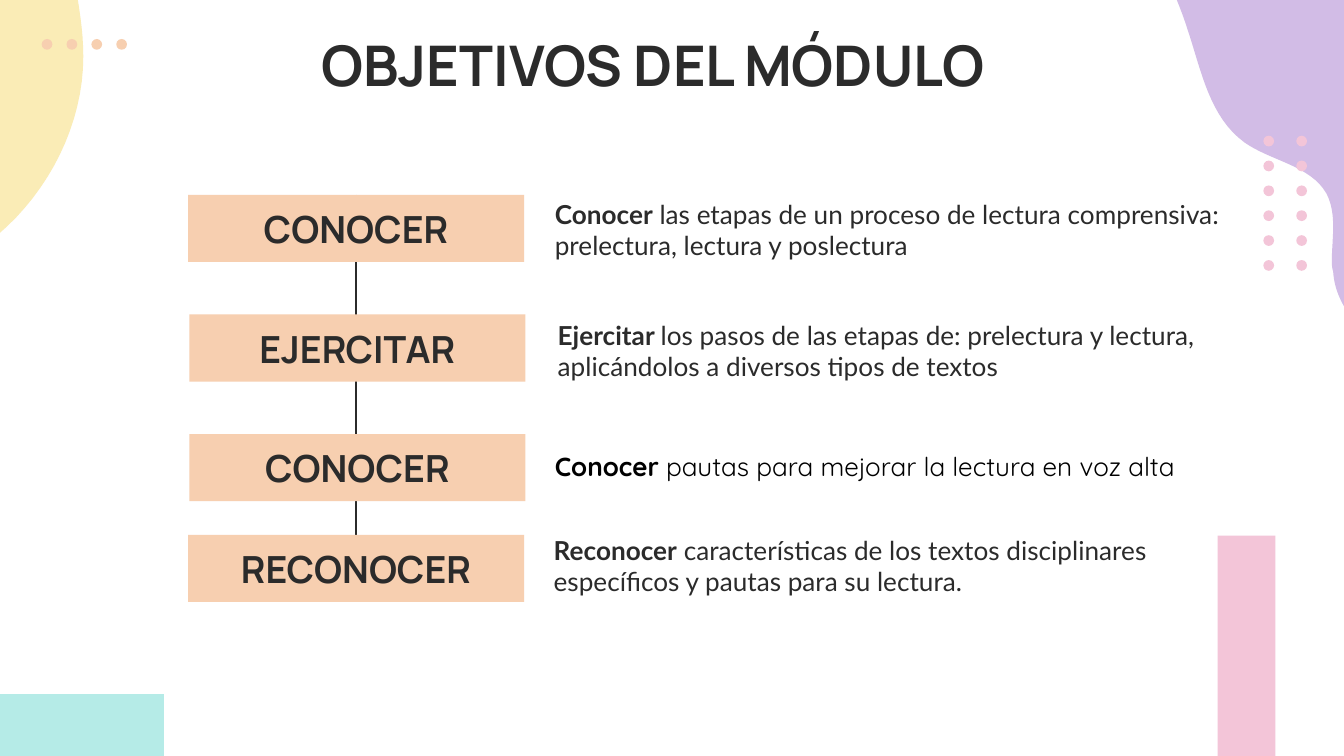
from dataclasses import dataclass

from lxml import etree
from pptx import Presentation
from pptx import util as u
from pptx.dml.color import RGBColor
from pptx.enum import shapes, text
from pptx.oxml.ns import qn

Inches = u.Inches


@dataclass(frozen=True)
class Theme:
    ink: str = "2B2B2B"
    black: str = "000000"
    yellow: str = "FAECB6"
    lilac: str = "D2BCE6"
    pink: str = "F3C5D8"
    mint: str = "B5EBE7"
    peach: str = "F7CFB0"
    heading: str = "Manrope"
    body: str = "Lato"
    accent: str = "Quicksand"
    title_size: int = 30
    label_size: int = 20
    body_size: int = 14
    line_width: float = 0.75


T = Theme()

# Outlines relative to their own box: pairs are corners, sextets are curves
YELLOW_BLOB = [
    (1.67, 0), (0, 0), (0, 3.57), (0.82, 3.57),
    (1.21, 3.24, 1.46, 2.74, 1.46, 2.24),
    (1.46, 1.84, 1.32, 1.46, 1.31, 1.06),
    (1.31, 0.66, 1.45, 0.29, 1.67, 0),
]
LILAC_BLOB = [
    (0, 0), (2.37, 0), (2.37, 3.11), (1.76, 3.11),
    (1.64, 3, 1.55, 2.85, 1.54, 2.68),
    (1.53, 2.65, 1.53, 2.62, 1.53, 2.6),
    (1.53, 2.52, 1.54, 2.43, 1.54, 2.35),
    (1.54, 2.26, 1.53, 2.18, 1.49, 2.1),
    (1.37, 1.89, 1.08, 1.86, 0.88, 1.72),
    (0.62, 1.53, 0.56, 1.19, 0.46, 0.89),
    (0.36, 0.57, 0.2, 0.27, 0, 0),
]


def paint(sp, color):
    sp.shadow.inherit = False
    sp.fill.solid()
    sp.fill.fore_color.rgb = RGBColor.from_string(color)
    sp.line.fill.background()
    return sp


def add_block(s, box, color, kind=shapes.MSO_SHAPE.RECTANGLE):
    return paint(s.shapes.add_shape(kind, *map(Inches, box)), color)


def write(sp, *runs, size=T.body_size, font=T.body, color=T.ink,
          align=text.PP_ALIGN.LEFT, anchor=text.MSO_ANCHOR.MIDDLE,
          left=0.1, inset=0.1):
    """Fill a shape with (words, bold) runs in one paragraph."""
    tf = sp.text_frame
    tf.word_wrap = True
    tf.vertical_anchor = anchor
    tf.margin_left, tf.margin_right = Inches(left), Inches(0.1)
    tf.margin_top = tf.margin_bottom = Inches(inset)
    p = tf.paragraphs[0]
    p.alignment = align
    for words, bold in runs:
        r = p.add_run()
        r.text = words
        r.font.name, r.font.size, r.font.bold = font, u.Pt(size), bold
        r.font.color.rgb = RGBColor.from_string(color)


def add_text(s, box, *runs, **fmt):
    write(s.shapes.add_textbox(*map(Inches, box)), *runs, **fmt)


def add_blob(s, x, y, outline, color, steps=16):
    """Draw an outline at x, y, following each cubic curve in short steps."""
    points = [outline[0]]
    for seg in outline[1:]:
        if len(seg) == 2:
            points.append(seg)
            continue
        curve = [points[-1], seg[:2], seg[2:4], seg[4:]]
        for i in range(1, steps + 1):
            t = i / steps
            weights = ((1 - t) ** 3, 3 * t * (1 - t) ** 2, 3 * t * t * (1 - t), t ** 3)
            points.append(tuple(sum(w * c[axis] for w, c in zip(weights, curve))
                                for axis in (0, 1)))
    points = [(Inches(x + px), Inches(y + py)) for px, py in points]
    builder = s.shapes.build_freeform(*points[0])
    builder.add_line_segments(points[1:], close=True)
    paint(builder.convert_to_shape(), color)


def add_dots(s, x, y, cols, rows, color, dx=0.185, dy=0.185):
    for col in range(cols):
        for row in range(rows):
            add_block(s, (x + col * dx, y + row * dy, 0.08, 0.08), color,
                      shapes.MSO_SHAPE.OVAL)


def add_decoration(s, width, height):
    # Corner blobs
    add_blob(s, -0.84, -1.82, YELLOW_BLOB, T.yellow)
    add_blob(s, width - 1.62, -0.66, LILAC_BLOB, T.lilac)
    # Dot grids
    add_dots(s, width - 0.6, 1.01, 2, 6, T.pink, dx=0.245)
    add_dots(s, 0.31, 0.29, 4, 1, T.peach)
    # Bars along the bottom
    add_block(s, (-0.01, height - 0.46, 1.23, 0.47), T.mint)
    add_block(s, (width - 0.94, height - 1.64, 0.43, 1.64), T.pink)


def add_objectives(s, x, y):
    """Chain of labels on the left, each with its description on the right."""
    # The connecting line goes first so that it lies behind the labels
    line = s.shapes.add_connector(shapes.MSO_CONNECTOR.STRAIGHT, 0, 0, 0, 0)
    line.line.color.rgb = RGBColor.from_string(T.ink)
    line.line.width = u.Pt(T.line_width)
    etree.SubElement(line._element.spPr, qn("a:effectLst"))

    # Labels: (words, x offset, y offset)
    labels = []
    for words, dx, dy in [("CONOCER", 0, 0), ("EJERCITAR", 0.01, 0.89),
                          ("CONOCER", 0.01, 1.78), ("RECONOCER", 0, 2.53)]:
        sp = add_block(s, (x + dx, y + dy, 2.5, 0.5), T.peach)
        write(sp, (words, True), size=T.label_size, font=T.heading,
              align=text.PP_ALIGN.CENTER)
        labels.append(sp)
    line.begin_connect(labels[0], 0)
    line.end_connect(labels[-1], 2)

    # Descriptions: (box offset and size, verb, rest, format)
    indented = dict(left=0.25)
    accent = dict(font=T.accent, color=T.black, inset=0.05,
                  anchor=text.MSO_ANCHOR.TOP)
    for (dx, dy, w, h), verb, rest, fmt in [
        ((2.63, 0.01, 5.36, 0.5), "Conocer",
         " las etapas de un proceso de lectura comprensiva: "
         "prelectura, lectura y poslectura", {}),
        ((2.5, 0.91, 5.36, 0.5), "Ejercitar ",
         "los pasos de las etapas de: prelectura y lectura, "
         "aplicándolos a diversos tipos de textos", indented),
        ((2.63, 1.85, 5.8, 0.34), "Conocer",
         " pautas para mejorar la lectura en voz alta", accent),
        ((2.47, 2.51, 5.03, 0.5), "Reconocer",
         " características de los textos disciplinares "
         "específicos y pautas para su lectura.", indented),
    ]:
        add_text(s, (x + dx, y + dy, w, h), (verb, True), (rest, False), **fmt)


def main():
    width = 10
    height = width * 9 / 16
    prs = Presentation()
    prs.slide_width, prs.slide_height = Inches(width), Inches(height)
    s = prs.slides.add_slide(prs.slide_layouts[6])

    add_decoration(s, width, height)
    add_text(s, (2.13, 0.13, 5.46, 0.63), ("OBJETIVOS DEL MÓDULO", True),
             size=T.title_size, font=T.heading, align=text.PP_ALIGN.CENTER,
             anchor=text.MSO_ANCHOR.TOP)
    add_objectives(s, 1.4, 1.45)
    prs.save("out.pptx")


if __name__ == "__main__":
    main()
